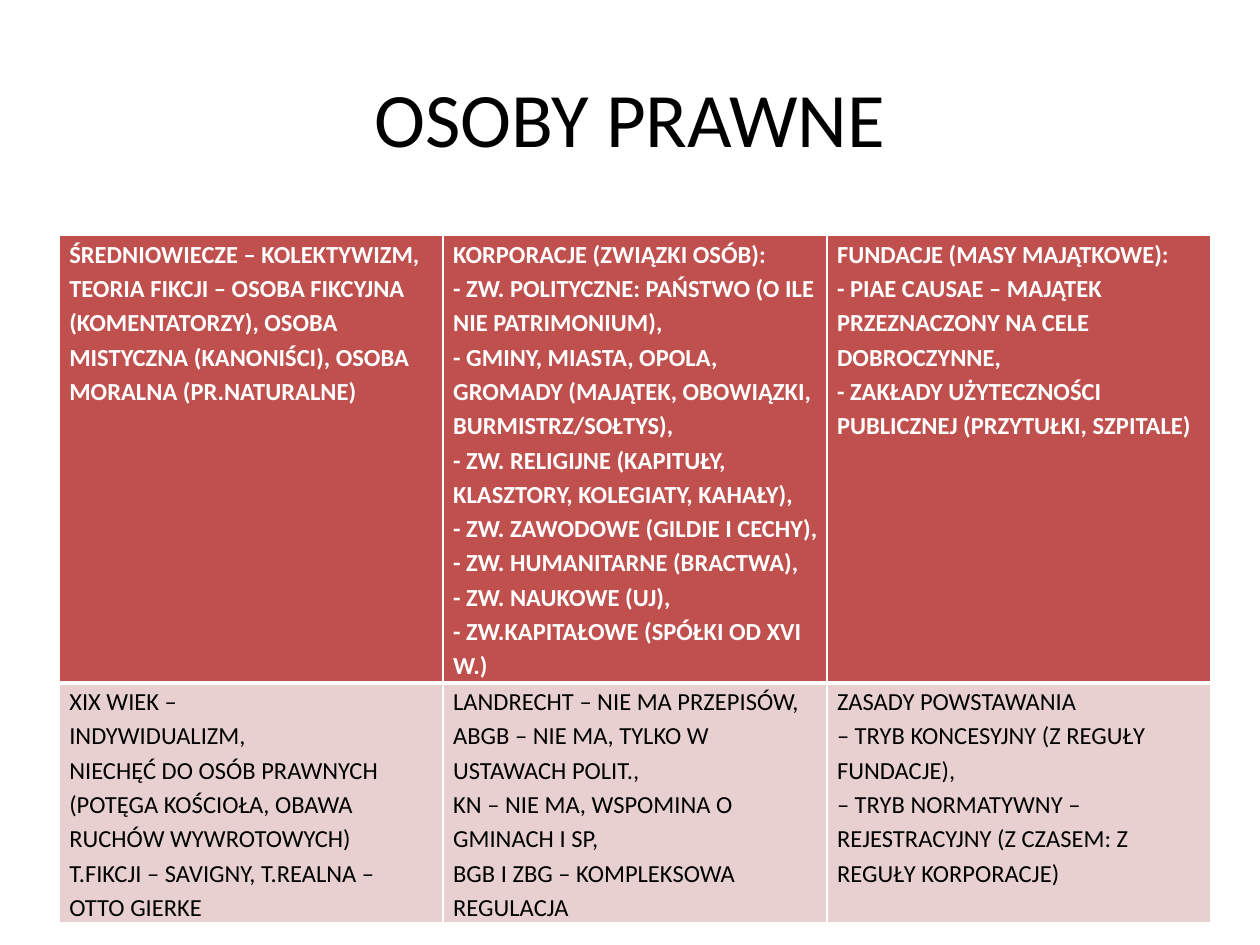
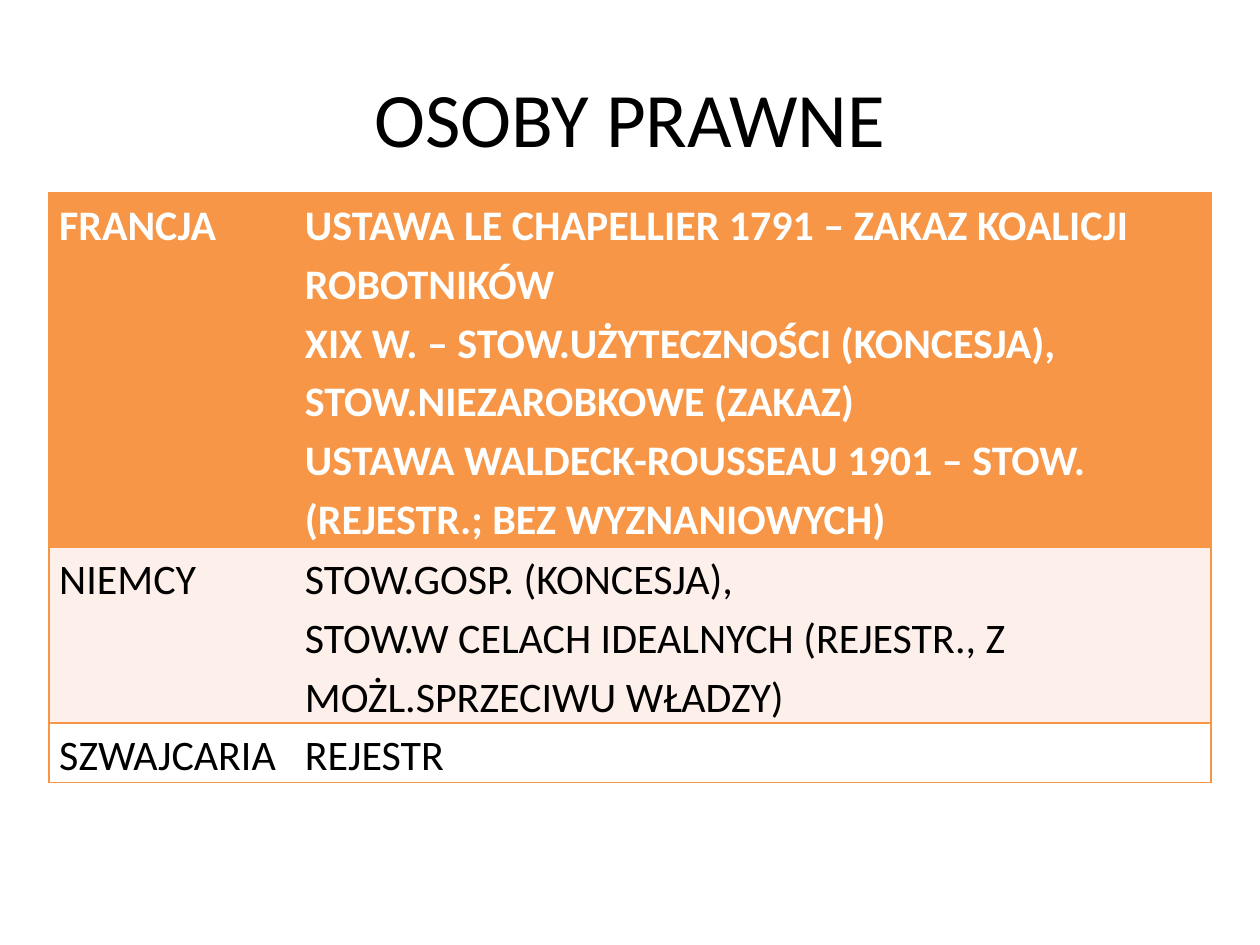
import pptx
import pptx.dml.color
import pptx.enum.text
import pptx.oxml
import pptx.oxml.ns
import pptx.util
from pptx.util import Inches

# Shared look
FONT = "Calibri"
WHITE, BLACK = "FFFFFF", "000000"
RED, PINK = "C0504D", "E8D0D0"
ORANGE, PEACH = "F79646", "FDEFE9"
TITLE = "OSOBY PRAWNE"

# Table wording: rows of cells, one string per paragraph
HISTORY = [
    [
        ["ŚREDNIOWIECZE – KOLEKTYWIZM,",
         "TEORIA FIKCJI – OSOBA FIKCYJNA (KOMENTATORZY), OSOBA MISTYCZNA "
         "(KANONIŚCI), OSOBA MORALNA (PR.NATURALNE)"],
        ["KORPORACJE (ZWIĄZKI OSÓB):",
         "- ZW. POLITYCZNE: PAŃSTWO (O ILE NIE PATRIMONIUM),",
         "- GMINY, MIASTA, OPOLA, GROMADY (MAJĄTEK, OBOWIĄZKI, BURMISTRZ/SOŁTYS),",
         "- ZW. RELIGIJNE (KAPITUŁY, KLASZTORY, KOLEGIATY, KAHAŁY),",
         "- ZW. ZAWODOWE (GILDIE I CECHY),",
         "- ZW. HUMANITARNE (BRACTWA),",
         "- ZW. NAUKOWE (UJ),",
         "- ZW.KAPITAŁOWE (SPÓŁKI OD XVI W.)"],
        ["FUNDACJE (MASY MAJĄTKOWE):",
         "- PIAE CAUSAE – MAJĄTEK PRZEZNACZONY NA CELE DOBROCZYNNE,",
         "- ZAKŁADY UŻYTECZNOŚCI PUBLICZNEJ (PRZYTUŁKI, SZPITALE)"],
    ],
    [
        ["XIX WIEK –",
         "INDYWIDUALIZM,",
         "NIECHĘĆ DO OSÓB PRAWNYCH (POTĘGA KOŚCIOŁA, OBAWA RUCHÓW WYWROTOWYCH)",
         "T.FIKCJI – SAVIGNY, T.REALNA – OTTO GIERKE"],
        ["LANDRECHT – NIE MA PRZEPISÓW,",
         "ABGB – NIE MA, TYLKO W USTAWACH POLIT.,",
         "KN – NIE MA, WSPOMINA O GMINACH I SP,",
         "BGB I ZBG – KOMPLEKSOWA REGULACJA"],
        ["ZASADY POWSTAWANIA",
         "– TRYB KONCESYJNY (Z REGUŁY FUNDACJE),",
         "– TRYB NORMATYWNY – REJESTRACYJNY (Z CZASEM: Z REGUŁY KORPORACJE)"],
    ],
]
STATES = [
    [
        ["FRANCJA"],
        ["USTAWA LE CHAPELLIER 1791 – ZAKAZ KOALICJI ROBOTNIKÓW",
         "XIX W. – STOW.UŻYTECZNOŚCI (KONCESJA), STOW.NIEZAROBKOWE (ZAKAZ)",
         "USTAWA WALDECK-ROUSSEAU 1901 – STOW. (REJESTR.; BEZ WYZNANIOWYCH)"],
    ],
    [
        ["NIEMCY"],
        ["STOW.GOSP. (KONCESJA),",
         "STOW.W CELACH IDEALNYCH (REJESTR., Z MOŻL.SPRZECIWU WŁADZY)"],
    ],
    [["SZWAJCARIA"], ["REJESTR"]],
]


def color(code):
    return pptx.dml.color.RGBColor.from_string(code)


def style(par, size, code, bold=False):
    par.font.name = FONT
    par.font.size = pptx.util.Pt(size)
    par.font.bold = bold
    par.font.color.rgb = color(code)


def add_title(slide):
    box = slide.shapes.add_textbox(Inches(0.5), Inches(0.3), Inches(9), Inches(1.25))
    frame = box.text_frame
    frame.word_wrap = True
    frame.vertical_anchor = pptx.enum.text.MSO_ANCHOR.MIDDLE
    par = frame.paragraphs[0]
    par.text = TITLE
    par.alignment = pptx.enum.text.PP_ALIGN.CENTER
    style(par, 44, BLACK)


def set_edges(cell, code, widths):
    """Draw the L, R, T, B borders; a width of 0 means no line."""
    props = cell._tc.get_or_add_tcPr()
    for spot, (side, width) in enumerate(zip("LRTB", widths)):
        paint = (f'<a:solidFill><a:srgbClr val="{code}"/></a:solidFill>'
                 if width else "<a:noFill/>")
        props.insert(spot, pptx.oxml.parse_xml(
            f'<a:ln{side} {pptx.oxml.ns.nsdecls("a")} w="{pptx.util.Pt(width)}">'
            f"{paint}</a:ln{side}>"))


def fill_cell(cell, lines, size, ink, back, bold):
    cell.margin_left, cell.margin_right = Inches(0.08), Inches(0.07)
    cell.margin_top = cell.margin_bottom = 0
    cell.fill.solid()
    cell.fill.fore_color.rgb = color(back)
    cell.text = "\n".join(lines)
    for par in cell.text_frame.paragraphs:
        par.line_spacing = 1.15
        style(par, size, ink, bold)


def add_grid(slide, rows, left, top, cols, heights, size, fills, edges):
    """Build a table whose first row is bold; edges(row, col) gives colour and widths."""
    frame = slide.shapes.add_table(
        len(rows), len(cols), Inches(left), Inches(top),
        Inches(sum(cols)), Inches(sum(heights)))
    table = frame.table
    table.first_row = table.horz_banding = False
    for col, width in zip(table.columns, cols):
        col.width = Inches(width)
    for row, height in zip(table.rows, heights):
        row.height = Inches(height)
    for r, cells in enumerate(rows):
        head = r == 0
        for c, lines in enumerate(cells):
            cell = table.cell(r, c)
            fill_cell(cell, lines, size, WHITE if head else BLACK, fills[r], head)
            set_edges(cell, *edges(r, c))


def white_edges(row, col):
    return WHITE, (1, 1, 1, 3) if row == 0 else (1, 1, 3, 1)


def orange_edges(row, col):
    return ORANGE, (1, 0, 1, 1) if col == 0 else (0, 1, 1, 1)


def main():
    deck = pptx.Presentation()
    deck.slide_width, deck.slide_height = Inches(10), Inches(7.5)
    blank = deck.slide_layouts[6]

    # Slide 1: from the Middle Ages to the 19th century
    slide = deck.slides.add_slide(blank)
    add_title(slide)
    add_grid(slide, HISTORY, 0.47, 1.87, [9.14 / 3] * 3, [3.55, 1.9], 14,
             [RED, PINK], white_edges)

    # Slide 2: rules by country
    slide = deck.slides.add_slide(blank)
    add_title(slide)
    add_grid(slide, STATES, 0.39, 1.53, [1.95, 7.27], [2.81, 1.4, 0.47], 24,
             [ORANGE, PEACH, WHITE], orange_edges)

    deck.save("out.pptx")


if __name__ == "__main__":
    main()
